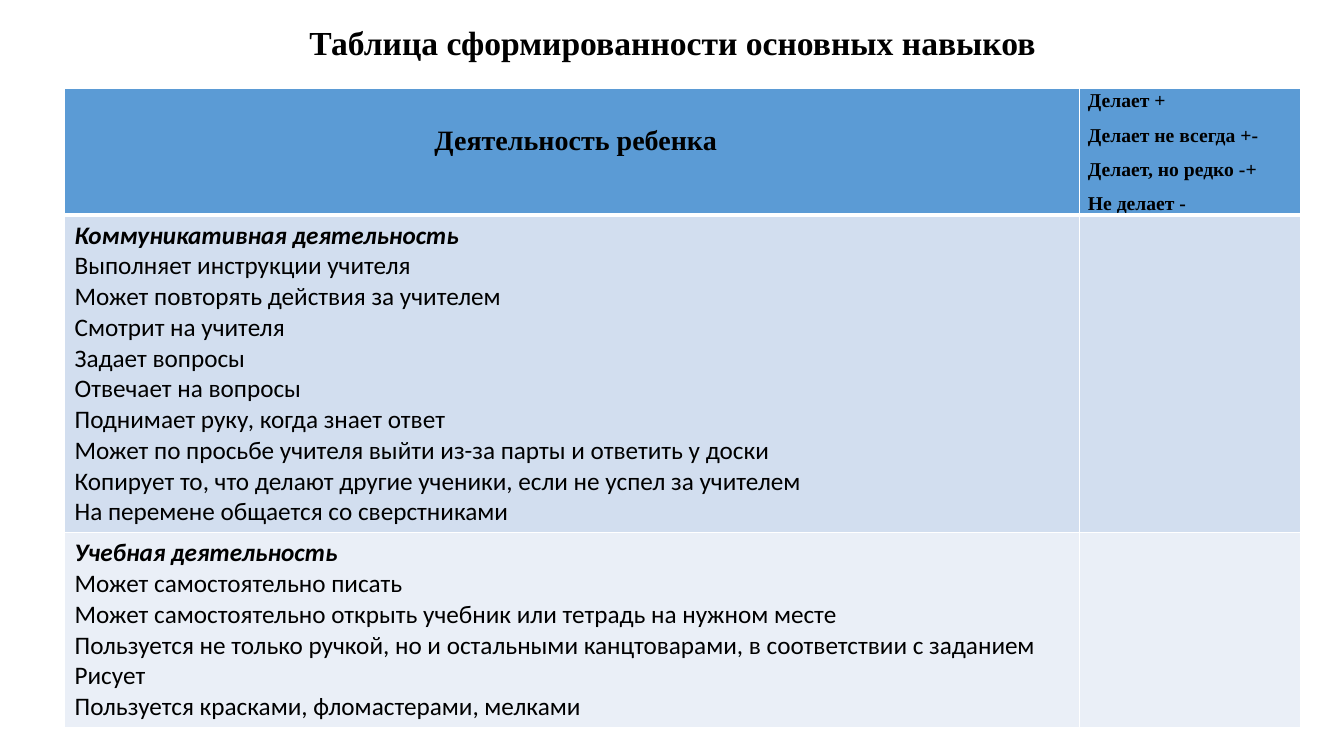
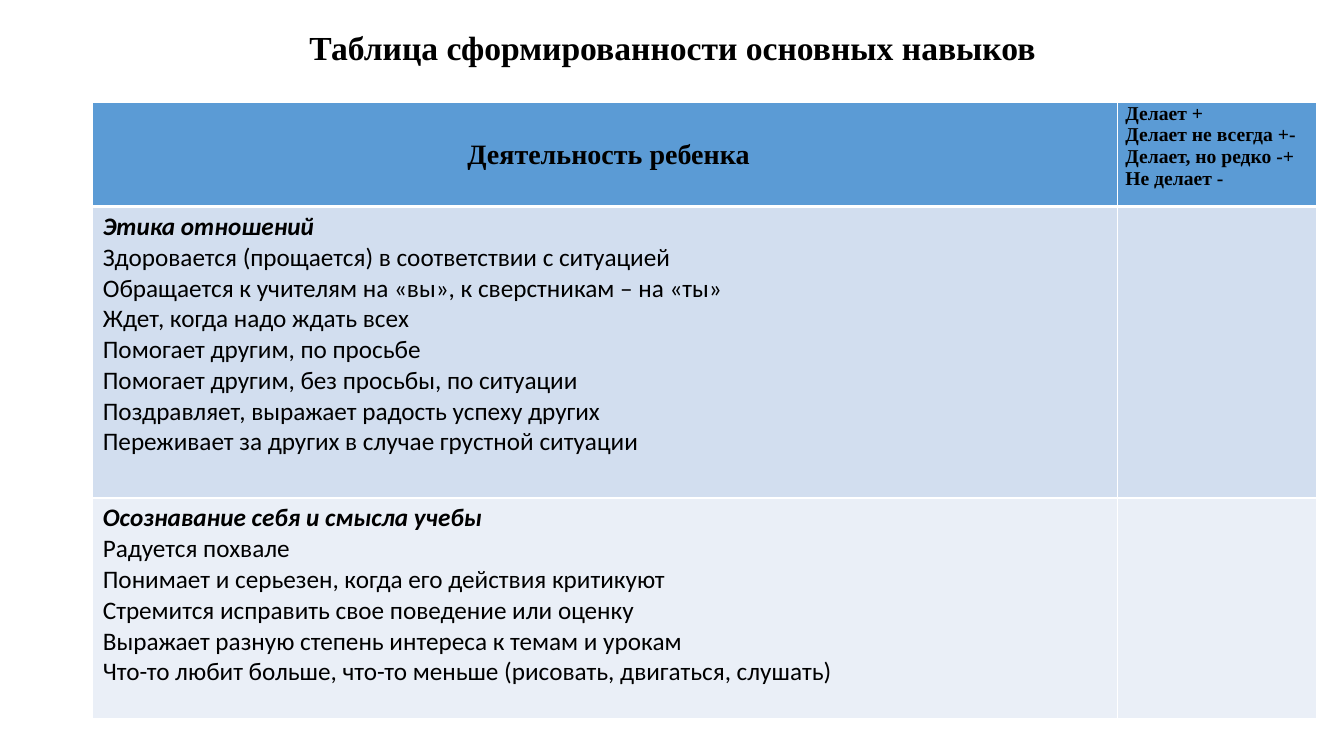
from lxml import etree
from pptx import Presentation
from pptx.dml.color import RGBColor
from pptx.enum.text import MSO_ANCHOR, MSO_AUTO_SIZE, PP_ALIGN
from pptx.oxml.ns import qn
from pptx.util import Inches, Pt

CENTER, LEFT = PP_ALIGN.CENTER, PP_ALIGN.LEFT
SLIDE_WIDTH, SLIDE_HEIGHT = 13.33, 7.5
TITLE_ONLY = 5
COLORS = {
    "header": "5B9BD5",
    "first_band": "D2DEEF",
    "second_band": "EAEFF7",
    "border": "FFFFFF",
    "text": "000000",
}
SERIF, SANS = "Times New Roman", "Calibri"
TITLE = "Таблица сформированности основных навыков"
ACTIVITY = "Деятельность ребенка"
MARKS = ["Делает +", "Делает не всегда +-", "Делает, но редко -+", "Не делает -"]

# Title and table boxes are left, top, width, height; columns and rows are
# proportions of the table box.
PAGES = [
    {
        "title_box": (0.92, 0.17, 11.5, 0.54),
        "table_box": (0.64, 0.88, 12.26, 6.33),
        "columns": (10.07, 2.19),
        "rows": (1.25, 3.15, 1.93),
        "mark_spacing": {"line_spacing": 1.07, "space_after": Pt(8)},
        "sections": [
            [
                "Коммуникативная деятельность",
                "Выполняет инструкции учителя",
                "Может повторять действия за учителем",
                "Смотрит на учителя",
                "Задает вопросы",
                "Отвечает на вопросы",
                "Поднимает руку, когда знает ответ",
                "Может по просьбе учителя выйти из-за парты и ответить у доски",
                "Копирует то, что делают другие ученики, если не успел за учителем",
                "На перемене общается со сверстниками",
            ],
            [
                "Учебная деятельность",
                "Может самостоятельно писать",
                "Может самостоятельно открыть учебник или тетрадь на нужном месте",
                "Пользуется не только ручкой, но и остальными канцтоварами, "
                "в соответствии с заданием",
                "Рисует",
                "Пользуется красками, фломастерами, мелками",
            ],
        ],
    },
    {
        "title_box": (0.92, 0.23, 11.5, 0.52),
        "table_box": (0.92, 1.02, 12.14, 6.11),
        "columns": (10.17, 1.98),
        "rows": (1.03, 2.89, 2.19),
        "mark_spacing": {},
        "sections": [
            [
                "Этика отношений",
                "Здоровается (прощается) в соответствии с ситуацией",
                "Обращается к учителям на «вы», к сверстникам – на «ты»",
                "Ждет, когда надо ждать всех",
                "Помогает другим, по просьбе",
                "Помогает другим, без просьбы, по ситуации",
                "Поздравляет, выражает радость успеху других",
                "Переживает за других в случае грустной ситуации",
            ],
            [
                "Осознавание себя и смысла учебы",
                "Радуется похвале",
                "Понимает и серьезен, когда его действия критикуют",
                "Стремится исправить свое поведение или оценку",
                "Выражает разную степень интереса к темам и урокам",
                "Что-то любит больше, что-то меньше (рисовать, двигаться, слушать)",
            ],
        ],
    },
]


def write_lines(frame, lines, font, size, bold=False, align=LEFT, spacing=None):
    for number, line in enumerate(lines):
        para = frame.paragraphs[0] if number == 0 else frame.add_paragraph()
        para.text = line
        para.alignment = align
        para.font.name = font
        para.font.size = Pt(size)
        para.font.bold = bold
        para.font.color.rgb = RGBColor.from_string(COLORS["text"])
        for name, value in (spacing or {}).items():
            setattr(para, name, value)


def set_margins(cell, left, top, right, bottom):
    cell.margin_left, cell.margin_top = Inches(left), Inches(top)
    cell.margin_right, cell.margin_bottom = Inches(right), Inches(bottom)


def paint_cell(cell, color, top, bottom):
    """Fill a cell and draw its borders; top and bottom are widths in points."""
    cell.fill.solid()
    cell.fill.fore_color.rgb = RGBColor.from_string(COLORS[color])
    properties = cell._tc.get_or_add_tcPr()
    widths = {"a:lnL": 1, "a:lnR": 1, "a:lnT": top, "a:lnB": bottom}
    for position, (tag, width) in enumerate(widths.items()):
        line = etree.Element(qn(tag), w=str(Pt(width)))
        fill = etree.SubElement(line, qn("a:solidFill"))
        etree.SubElement(fill, qn("a:srgbClr"), val=COLORS["border"])
        properties.insert(position, line)


def add_title(page, box):
    title = page.shapes.title
    title.left, title.top, title.width, title.height = map(Inches, box)
    frame = title.text_frame
    frame.auto_size = MSO_AUTO_SIZE.NONE
    frame.vertical_anchor = MSO_ANCHOR.MIDDLE
    write_lines(frame, [TITLE], SERIF, 24, True, CENTER, {"line_spacing": 0.9})


def fill_header(activity, marks, mark_spacing):
    set_margins(activity, 0.08, 0.34, 0.01, 0.01)
    write_lines(activity.text_frame, [ACTIVITY], SERIF, 20, True, CENTER,
                {"line_spacing": 1.07})
    set_margins(marks, 0.08, 0, 0.08, 0)
    write_lines(marks.text_frame, MARKS, SERIF, 14, True, spacing=mark_spacing)


def fill_section(cell, lines):
    write_lines(cell.text_frame, lines, SANS, 18)
    heading = cell.text_frame.paragraphs[0].font
    heading.bold = heading.italic = True


def add_skills_table(page, box, columns, rows, mark_spacing, sections):
    left, top, width, height = map(Inches, box)
    table = page.shapes.add_table(
        len(rows), len(columns), left, top, width, height).table
    for column, share in zip(table.columns, columns):
        column.width = int(width * share / sum(columns))
    for row, share in zip(table.rows, rows):
        row.height = int(height * share / sum(rows))

    bands = [("header", 1, 3), ("first_band", 3, 1), ("second_band", 1, 1)]
    for row, band in zip(table.rows, bands):
        for cell in row.cells:
            paint_cell(cell, *band)

    fill_header(table.cell(0, 0), table.cell(0, 1), mark_spacing)
    for number, lines in enumerate(sections, start=1):
        fill_section(table.cell(number, 0), lines)


def main():
    deck = Presentation()
    deck.slide_width, deck.slide_height = Inches(SLIDE_WIDTH), Inches(SLIDE_HEIGHT)
    for content in PAGES:
        page = deck.slides.add_slide(deck.slide_layouts[TITLE_ONLY])
        add_title(page, content["title_box"])
        add_skills_table(page, content["table_box"], content["columns"],
                         content["rows"], content["mark_spacing"],
                         content["sections"])
    deck.save("out.pptx")


if __name__ == "__main__":
    main()
